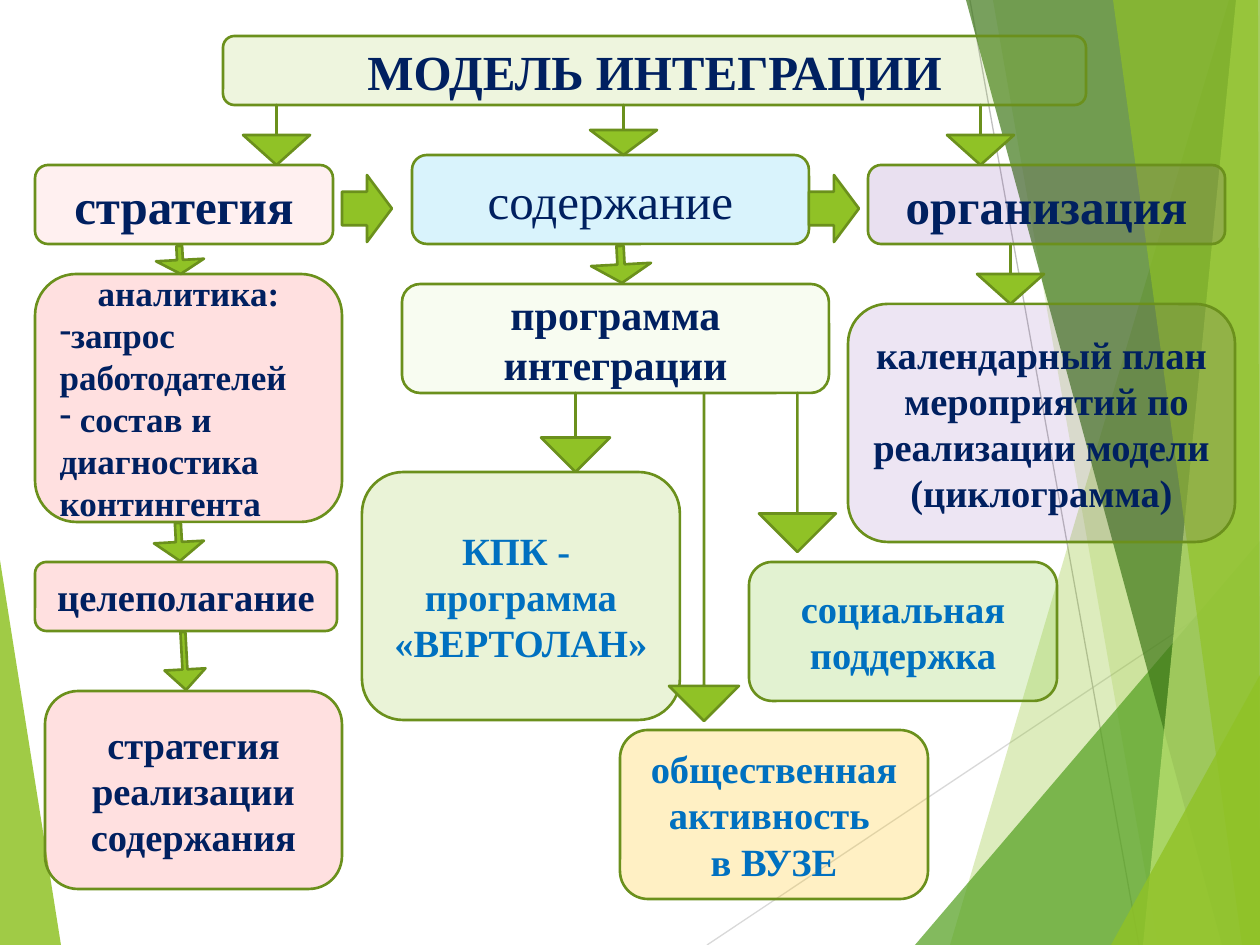
from dataclasses import dataclass

from lxml import etree
from pptx import Presentation
from pptx.dml.color import RGBColor
from pptx.enum.shapes import MSO_CONNECTOR, MSO_SHAPE
from pptx.enum.text import MSO_ANCHOR, PP_ALIGN
from pptx.oxml.ns import qn
from pptx.util import Pt

ROUNDED = MSO_SHAPE.ROUNDED_RECTANGLE
DOWN_ARROW = MSO_SHAPE.DOWN_ARROW
RIGHT_ARROW = MSO_SHAPE.RIGHT_ARROW
STRAIGHT = MSO_CONNECTOR.STRAIGHT
MIDDLE = MSO_ANCHOR.MIDDLE
CENTER = PP_ALIGN.CENTER
LEFT = PP_ALIGN.LEFT
EMU_PER_PX = 914400 / 126


@dataclass(frozen=True)
class Theme:
    font: str = "Times New Roman"
    navy: str = "002060"
    blue: str = "0070C0"
    green: str = "90C226"
    outline: str = "6B901C"
    light_gray: str = "D9D9D9"
    gray: str = "BFBFBF"
    leaf: str = "54A021"
    forest: str = "3F7819"
    lime: str = "C0E474"
    pale_lime: str = "D5EDA2"
    grass: str = "92D050"
    red: str = "FF0000"
    purple: str = "7030A0"
    sky: str = "00B0F0"
    gold: str = "FFC000"
    heading: int = 28
    subheading: int = 24
    body: int = 22
    small: int = 20
    border: float = 1.5
    hairline: float = 0.75


def px(value):
    return round(value * EMU_PER_PX)


class Diagram:
    """Draws the elements of one slide in a shared style."""

    def __init__(self, slide, theme):
        self.shapes = slide.shapes
        self.theme = theme

    def paint(self, shape, color, opacity=100):
        shape.shadow.inherit = False
        shape.fill.solid()
        shape.fill.fore_color.rgb = RGBColor.from_string(color)
        if opacity < 100:
            fill_color = shape.fill._xPr.find(qn("a:solidFill"))[0]
            etree.SubElement(fill_color, qn("a:alpha"), val=str(opacity * 1000))

    def outline(self, shape):
        shape.line.color.rgb = RGBColor.from_string(self.theme.outline)
        shape.line.width = Pt(self.theme.border)

    def facet(self, points, color, opacity):
        points = [(px(x), px(y)) for x, y in points]
        builder = self.shapes.build_freeform(*points[0])
        builder.add_line_segments(points[1:], close=True)
        shape = builder.convert_to_shape()
        self.paint(shape, color, opacity)
        shape.line.fill.background()

    def thin_line(self, start, end, color):
        line = self.shapes.add_connector(STRAIGHT, *map(px, start + end))
        line.line.color.rgb = RGBColor.from_string(color)
        line.line.width = Pt(self.theme.hairline)
        etree.SubElement(line._element.spPr, qn("a:effectLst"))

    def box(self, frame, text, fill, opacity, size, color, bold=True, bullets=False):
        shape = self.shapes.add_shape(ROUNDED, *map(px, frame))
        self.paint(shape, fill, opacity)
        self.outline(shape)
        text_frame = shape.text_frame
        text_frame.word_wrap = True
        text_frame.vertical_anchor = MIDDLE
        text_frame.text = text
        for index, paragraph in enumerate(text_frame.paragraphs):
            paragraph.alignment = CENTER
            if bullets and index:
                paragraph.alignment = LEFT
                properties = paragraph._p.get_or_add_pPr()
                etree.SubElement(properties, qn("a:buChar"), char="-")
            for run in paragraph.runs:
                run.font.name = self.theme.font
                run.font.size = Pt(size)
                run.font.bold = bold
                run.font.color.rgb = RGBColor.from_string(color)

    def arrow(self, kind, frame, shaft=0.5, rotation=0):
        shape = self.shapes.add_shape(kind, *map(px, frame))
        shape.adjustments[0] = shaft
        shape.adjustments[1] = 0.5
        shape.rotation = rotation
        self.paint(shape, self.theme.green)
        self.outline(shape)


def draw_background(diagram, theme):
    diagram.facet([(0, 560), (61, 945), (0, 945)], theme.green, 85)
    diagram.thin_line((707, 945), (1260, 576), theme.light_gray)
    diagram.thin_line((970, 0), (1139, 945), theme.gray)
    facets = [
        ([(1229, 0), (950, 945), (1260, 945), (1260, 0)], theme.green, 30),
        ([(993, 0), (1158, 945), (1260, 945), (1260, 0)], theme.green, 20),
        ([(915, 945), (1260, 541), (1260, 945)], theme.leaf, 72),
        ([(966, 0), (1222, 945), (1260, 945), (1260, 0)], theme.forest, 70),
        ([(1236, 0), (1143, 945), (1260, 945), (1260, 0)], theme.lime, 70),
        ([(1113, 0), (1242, 945), (1260, 945), (1258, 0)], theme.green, 65),
        ([(1111, 945), (1260, 675), (1260, 945)], theme.green, 80),
    ]
    for points, color, opacity in facets:
        diagram.facet(points, color, opacity)


def draw_model(diagram, theme):
    heading = (theme.heading, theme.navy)
    body = (theme.body, theme.navy)
    accent = (theme.body, theme.blue)
    boxes = [
        ((35, 165, 298, 79), "стратегия", theme.red, 6, *heading),
        ((223, 36, 863, 69), "МОДЕЛЬ ИНТЕГРАЦИИ", theme.green, 15, *heading),
        ((868, 165, 357, 79), "организация", theme.purple, 15, *heading),
        ((412, 155, 397, 89), "содержание", theme.sky, 15, *heading, False),
        ((35, 274, 307, 248),
         "аналитика:\nзапрос работодателей\n состав и диагностика контингента",
         theme.red, 12, theme.small, theme.navy, True, True),
        ((35, 562, 302, 69), "целеполагание", theme.red, 12, *body),
        ((45, 691, 297, 198), "стратегия реализации содержания", theme.red, 12, *body),
        ((402, 284, 427, 109), "программа интеграции", theme.pale_lime, 15,
         theme.subheading, theme.navy),
        ((362, 472, 318, 248), "КПК - \nпрограмма «ВЕРТОЛАН»", theme.green, 18, *accent),
        ((749, 562, 308, 139), "социальная поддержка", theme.grass, 26, *accent),
        ((620, 730, 308, 169), "общественная активность \nв ВУЗЕ", theme.gold, 23, *accent),
        ((848, 304, 387, 238),
         "календарный план  мероприятий по реализации модели (циклограмма)",
         theme.purple, 12, *body),
    ]
    for box in boxes:
        diagram.box(*box)

    thin_arrows = [
        (947, 105, 67, 60), (590, 105, 67, 50), (243, 105, 67, 60),
        (759, 393, 77, 159), (669, 393, 70, 328), (541, 393, 69, 79),
        (977, 244, 67, 60),
    ]
    for frame in thin_arrows:
        diagram.arrow(DOWN_ARROW, frame, shaft=0)

    tilted_arrows = [
        (156, 246, 48, 28), (154, 523, 50, 38), (164, 632, 41, 58), (591, 246, 60, 37),
    ]
    for frame in tilted_arrows:
        diagram.arrow(DOWN_ARROW, frame, shaft=0.12, rotation=356.9)

    for left in (342, 809):
        diagram.arrow(RIGHT_ARROW, (left, 175, 50, 67))


def main():
    presentation = Presentation()
    presentation.slide_width = px(1260)
    presentation.slide_height = px(945)
    slide = presentation.slides.add_slide(presentation.slide_layouts[6])
    theme = Theme()
    diagram = Diagram(slide, theme)
    draw_background(diagram, theme)
    draw_model(diagram, theme)
    presentation.save("out.pptx")


if __name__ == "__main__":
    main()
